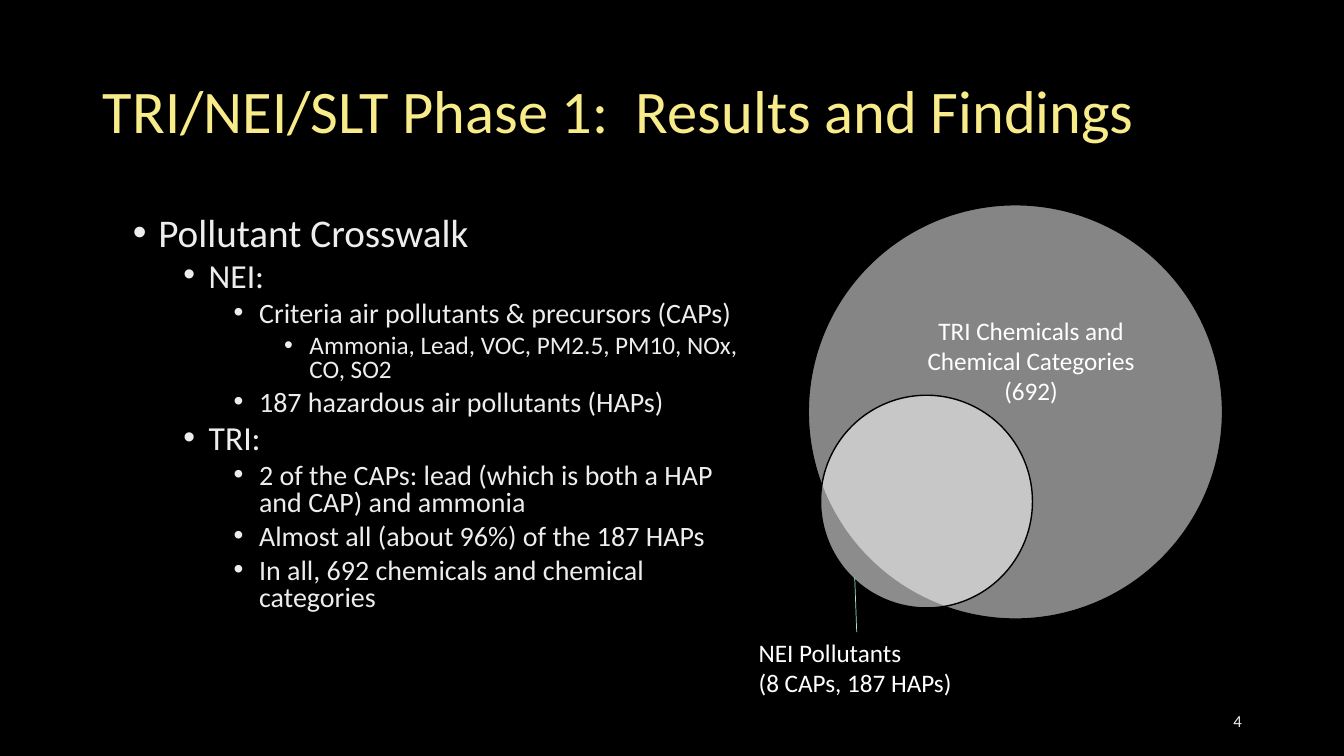
from typing import NamedTuple

from lxml.etree import SubElement
from pptx import Presentation
from pptx.dml.color import RGBColor
from pptx.enum.shapes import MSO_CONNECTOR, MSO_SHAPE
from pptx.enum.text import MSO_ANCHOR, PP_ALIGN
from pptx.oxml.ns import qn
from pptx.util import Cm, Pt

WHITE, BLACK, PALE = "FFFFFF", "000000", "EDEDED"
YELLOW, MINT = "F8EB89", "97E9D5"
SIZES = [28, 24, 20, 18]


class Box(NamedTuple):
    left: float
    top: float
    width: float
    height: float


class Point(NamedTuple):
    level: int
    text: str


class Disc(NamedTuple):
    box: Box
    alpha: int


class Label(NamedTuple):
    box: Box
    lines: list[str]
    align: PP_ALIGN = PP_ALIGN.LEFT
    size: int = 18
    color: str = WHITE
    anchor: MSO_ANCHOR = MSO_ANCHOR.TOP


POINTS = [
    Point(0, "Pollutant Crosswalk"),
    Point(1, "NEI:"),
    Point(2, "Criteria air pollutants & precursors (CAPs)"),
    Point(3, "Ammonia, Lead, VOC, PM2.5, PM10, NOx, CO, SO2"),
    Point(2, "187 hazardous air pollutants (HAPs)"),
    Point(1, "TRI:"),
    Point(2, "2 of the CAPs: lead (which is both a HAP and CAP) and ammonia"),
    Point(2, "Almost all (about 96%) of the 187 HAPs"),
    Point(2, "In all, 692 chemicals and chemical categories"),
]
DISCS = [
    Disc(Box(20.37, 5.16, 10.44, 10.44), 52),
    Disc(Box(20.68, 9.96, 5.34, 5.36), 55),
]
LABELS = [
    Label(Box(22.91, 7.82, 6.15, 2.57),
          ["TRI Chemicals and Chemical Categories", "(692)"], PP_ALIGN.CENTER),
    Label(Box(18.87, 15.93, 10.67, 1.8), ["NEI Pollutants", "(8 CAPs, 187 HAPs)"]),
    Label(Box(23.93, 17.65, 7.62, 1.02), ["4"], PP_ALIGN.RIGHT, 12, PALE,
          MSO_ANCHOR.MIDDLE),
]


def paint(target, color: str) -> None:
    """Give a fill a solid colour."""
    target.solid()
    target.fore_color.rgb = RGBColor.from_string(color)


def style(para, size: float, color: str) -> None:
    para.font.name = "Calibri"
    para.font.size = Pt(size)
    paint(para.font.fill, color)


def place(box: Box) -> list[Cm]:
    return [Cm(side) for side in box]


def add_title(slide) -> None:
    title = slide.shapes.title
    title.left, title.top, title.width, title.height = place(
        Box(2.34, 1.02, 29.21, 3.68))
    frame = title.text_frame
    frame.text = "TRI/NEI/SLT Phase 1:  Results and Findings"
    frame.vertical_anchor = MSO_ANCHOR.MIDDLE
    para = frame.paragraphs[0]
    para.alignment = PP_ALIGN.LEFT
    para.line_spacing = 0.9
    style(para, 43.2, YELLOW)


def add_text(slide, box: Box, lines: list[str]):
    """Add a wrapped text box with one paragraph a line."""
    frame = slide.shapes.add_textbox(*place(box)).text_frame
    frame.word_wrap = True
    frame.text = "\n".join(lines)
    return frame


def add_points(slide) -> None:
    frame = add_text(slide, Box(3.1, 5.36, 15.75, 10.85), [p.text for p in POINTS])
    for row, (para, point) in enumerate(zip(frame.paragraphs, POINTS)):
        para.level = point.level
        props = para._p.get_or_add_pPr()
        props.set("marL", str(Cm(0.64 + 1.27 * point.level)))
        props.set("indent", str(-Cm(0.64)))
        SubElement(props, qn("a:buFont"), typeface="Arial")
        SubElement(props, qn("a:buChar"), char="•")
        style(para, SIZES[point.level], PALE)
        para.line_spacing = 0.8
        if row:
            para.space_before = Pt(5)


def add_label(slide, label: Label) -> None:
    frame = add_text(slide, label.box, label.lines)
    frame.vertical_anchor = label.anchor
    for para in frame.paragraphs:
        para.alignment = label.align
        style(para, label.size, label.color)


def add_disc(group, disc: Disc) -> None:
    shape = group.shapes.add_shape(MSO_SHAPE.OVAL, *place(disc.box))
    shape.shadow.inherit = False
    paint(shape.fill, WHITE)
    tint = shape._element.spPr.find(qn("a:solidFill"))[0]
    SubElement(tint, qn("a:alpha"), val=str(disc.alpha * 1000))
    paint(shape.line.fill, BLACK)
    shape.line.width = Pt(1)


def add_lead(slide) -> None:
    """Draw the line from the lower label to the small disc."""
    lead = slide.shapes.add_connector(
        MSO_CONNECTOR.STRAIGHT, Cm(21.59), Cm(15.93), Cm(21.54), Cm(14.55))
    paint(lead.line.fill, MINT)
    lead.line.width = Pt(0.5)
    SubElement(lead._element.spPr, qn("a:effectLst"))


def main() -> None:
    deck = Presentation()
    deck.slide_width, deck.slide_height = Cm(33.87), Cm(19.05)
    slide = deck.slides.add_slide(deck.slide_layouts[5])
    paint(slide.background.fill, BLACK)
    add_title(slide)
    add_points(slide)
    group = slide.shapes.add_group_shape()
    for disc in DISCS:
        add_disc(group, disc)
    for label in LABELS:
        add_label(slide, label)
    add_lead(slide)
    deck.save("out.pptx")


if __name__ == "__main__":
    main()
